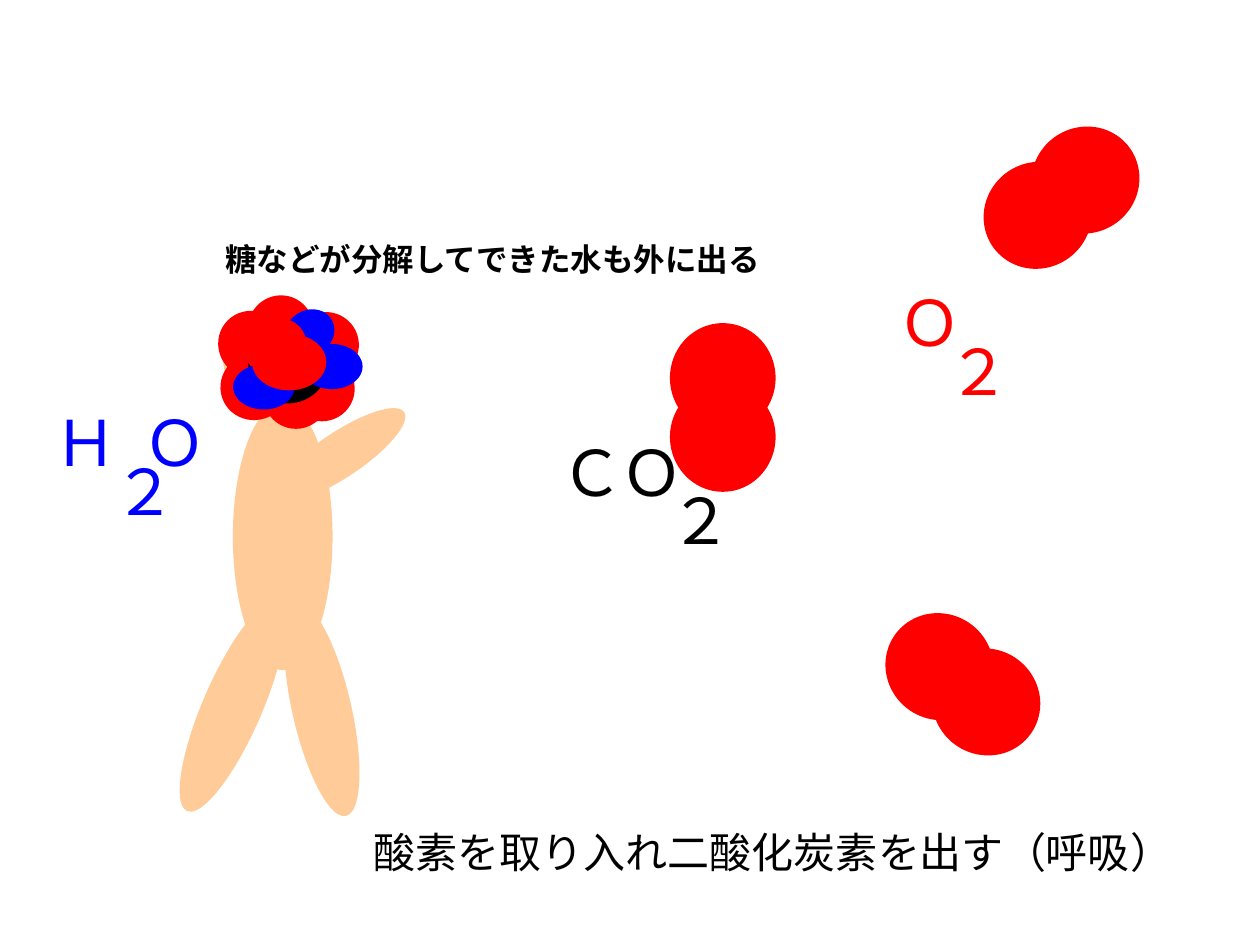
import lxml.etree
import pptx
import pptx.dml.color
import pptx.enum.shapes
import pptx.enum.text
import pptx.oxml.ns
import pptx.util

Cm = pptx.util.Cm
RGBColor = pptx.dml.color.RGBColor
SKIN = RGBColor(0xFF, 0xCC, 0x99)
RED = RGBColor(0xFF, 0x00, 0x00)
BLUE = RGBColor(0x00, 0x00, 0xFF)
BLACK = RGBColor(0x00, 0x00, 0x00)
LETTER_FONT = "Noto Sans CJK JP"


def add_ellipse(group, center, size, rotation, color):
    (cx, cy), (w, h) = center, size
    sp = group.shapes.add_shape(
        pptx.enum.shapes.MSO_SHAPE.OVAL,
        Cm(cx - w / 2), Cm(cy - h / 2), Cm(w), Cm(h))
    sp.rotation = rotation
    sp.shadow.inherit = False
    sp.fill.solid()
    sp.fill.fore_color.rgb = color
    sp.line.fill.background()


def add_run(p, text, size, font, color, bold=False):
    r = p.add_run()
    r.text = text
    r.font.size = pptx.util.Pt(size)
    r.font.bold = bold
    r.font.color.rgb = color
    r.font.name = font
    return r


prs = pptx.Presentation()
prs.slide_width, prs.slide_height = Cm(25.4), Cm(19.05)
s = prs.slides.add_slide(prs.slide_layouts[6])

# Person: trunk, legs, head, arm
person = s.shapes.add_group_shape()
for center, size, rotation in [
    ((5.7, 10.82), (2.01, 5.38), 0),
    ((4.69, 14.24), (1.19, 4.6), 23.5),
    ((6.49, 14.31), (1.19, 4.39), 347.2),
    ((5.69, 7.21), (2.39, 2.18), 0),
    ((6.86, 9.17), (0.91, 3.1), 56.2),
]:
    add_ellipse(person, center, size, rotation, SKIN)

# Molecules: rotation, outer atoms (colour, size, two centres), middle atom
OXYGEN = (2.21, 2.13)
SMALL_OXYGEN = (1.4, 1.35)
CARBON = (BLACK, (1.63, 1.6), (5.82, 7.33))
for rotation, color, size, centers, middle in [
    # Oxygen and carbon dioxide in the air
    (323.1, RED, OXYGEN, [(20.92, 4.34), (21.88, 3.63)], None),
    (90, RED, OXYGEN, [(14.57, 7.62), (14.57, 8.81)], None),
    (36.8, RED, OXYGEN, [(18.94, 13.44), (19.88, 14.15)], None),
    # Carbon dioxide at the head
    (36.4, RED, SMALL_OXYGEN, [(5.09, 6.95), (6.46, 7.81)], CARBON),
    (82, RED, (1.27, 1.3), [(5.66, 6.59), (5.97, 8.01)],
     (BLACK, (1.47, 1.55), (5.87, 7.3))),
    (334, RED, SMALL_OXYGEN, [(5.14, 7.79), (6.54, 6.97)], CARBON),
    # Water at the head
    (327.4, BLUE, (1.04, 0.91), [(5.47, 7.67), (6.24, 6.71)],
     (RED, (1.27, 1.14), (5.56, 7.0))),
    (0, BLUE, (1.24, 0.91), [(5.32, 7.8), (6.69, 7.39)],
     (RED, (1.5, 1.14), (5.83, 7.3))),
]:
    molecule = s.shapes.add_group_shape()
    for center in centers:
        add_ellipse(molecule, center, size, rotation, color)
    if middle:
        middle_color, middle_size, middle_center = middle
        add_ellipse(molecule, middle_center, middle_size, rotation, middle_color)

# Captions
for text, left, top, width, height, size, bold in [
    ("酸素を取り入れ二酸化炭素を出す（呼吸）", 7.29, 16.54, 16.61, 1.27, 24, False),
    ("糖などが分解してできた水も外に出る", 4.29, 4.72, 11.4, 1.02, 18, True),
]:
    sp = s.shapes.add_textbox(Cm(left), Cm(top), Cm(width), Cm(height))
    tf = sp.text_frame
    tf.word_wrap = True
    tf.auto_size = pptx.enum.text.MSO_AUTO_SIZE.SHAPE_TO_FIT_TEXT
    add_run(tf.paragraphs[0], text, size, "Arial", BLACK, bold)

# Chemical formulas: one box for each letter
LETTER_SIZES = {"Ｏ": (1.02, 1.42), "Ｃ": (0.99, 1.4),
                "Ｈ": (0.99, 1.4), "２": (0.61, 0.69)}
for color, letters in [
    (RED, [("Ｏ", 18.11, 5.72), ("２", 19.1, 6.71)]),
    (BLACK, [("Ｏ", 12.5, 8.74), ("２", 13.49, 9.7), ("Ｃ", 11.3, 8.74)]),
    (BLUE, [("Ｈ", 1.09, 8.13), ("Ｏ", 2.9, 8.13), ("２", 2.29, 9.12)]),
]:
    formula = s.shapes.add_group_shape()
    for letter, left, top in letters:
        width, height = LETTER_SIZES[letter]
        sp = formula.shapes.add_textbox(Cm(left), Cm(top), Cm(width), Cm(height))
        tf = sp.text_frame
        tf.word_wrap = False
        tf.margin_left = tf.margin_right = tf.margin_top = tf.margin_bottom = 0
        p = tf.paragraphs[0]
        p.alignment = pptx.enum.text.PP_ALIGN.CENTER
        r = add_run(p, letter, 36, LETTER_FONT, color)
        # East Asian typeface for the full-width letters
        ea = lxml.etree.SubElement(r.font._element, pptx.oxml.ns.qn("a:ea"))
        ea.set("typeface", LETTER_FONT)

prs.save("out.pptx")
